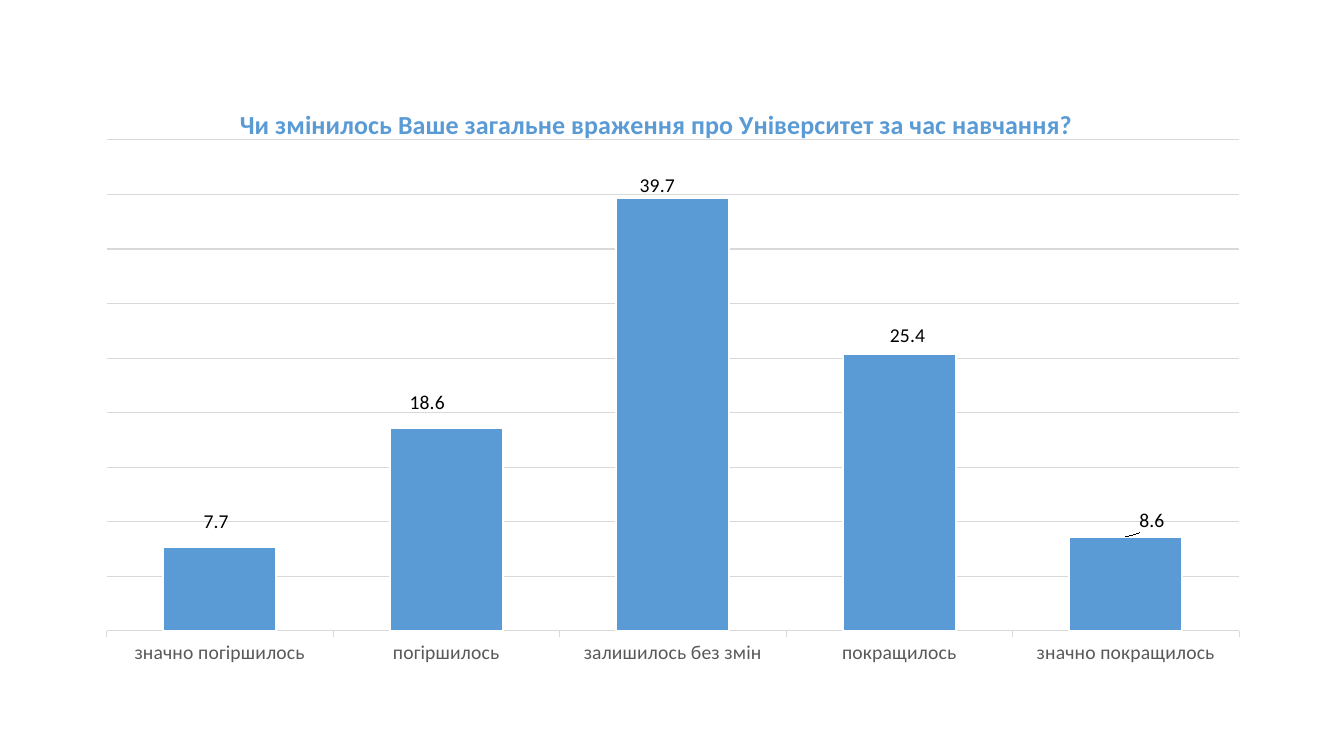
from pptx import Presentation
from pptx.chart.data import CategoryChartData
from pptx.dml.color import RGBColor
from pptx.enum.chart import XL_CHART_TYPE, XL_LABEL_POSITION, XL_TICK_MARK
from pptx.oxml import parse_xml
from pptx.oxml.ns import nsdecls
from pptx.util import Inches, Pt

COLUMNS = XL_CHART_TYPE.COLUMN_CLUSTERED
OUTSIDE_END = XL_LABEL_POSITION.OUTSIDE_END
TICK_OUT, TICK_NONE = XL_TICK_MARK.OUTSIDE, XL_TICK_MARK.NONE

FONT = "Calibri"
COLORS = {"bar": "5B9BD5", "edge": "FFFFFF", "grid": "D9D9D9",
          "axis": "595959", "label": "000000"}
TITLE = "Чи змінилось Ваше загальне враження про Університет за час навчання?"

# Answer, share in percent, label shift as shares of the chart's size
ANSWERS = [
    ("значно погіршилось", 7.7, (-0.003, -0.015)),
    ("погіршилось", 18.6, (-0.016, -0.015)),
    ("залишилось без змін", 39.7, (-0.013, 0.007)),
    ("покращилось", 25.4, (0.007, -0.003)),
    ("значно покращилось", 8.6, (0.022, 0)),
]


def style_font(font, size, color, bold=False):
    font.name, font.size, font.bold = FONT, Pt(size), bold
    font.color.rgb = RGBColor.from_string(COLORS[color])


def style_line(line, color, width):
    line.color.rgb = RGBColor.from_string(COLORS[color])
    line.width = Pt(width)


def set_layout(parent, index, settings):
    """Give a chart part a manual layout, as its child number index."""
    for layout in parent.xpath("c:layout"):
        parent.remove(layout)
    items = "".join(f'<c:{tag} val="{value}"/>' for tag, value in settings.items())
    parent.insert(index, parse_xml(
        f'<c:layout {nsdecls("c")}><c:manualLayout>{items}</c:manualLayout></c:layout>'))


def add_answer_chart(presentation, slide):
    data = CategoryChartData()
    data.categories = [answer for answer, _, _ in ANSWERS]
    data.add_series("Series 1", [share for _, share, _ in ANSWERS])
    frame = slide.shapes.add_chart(
        COLUMNS, Inches(0.62), Inches(0.79), Inches(11.8), Inches(5.93), data)
    chart = frame.chart
    chart.has_legend = False
    style_font(chart.font, 10, "label")
    set_layout(chart.element.xpath(".//c:plotArea")[0], 0, {
        "layoutTarget": "inner", "xMode": "edge", "yMode": "edge",
        "x": 0.037, "y": 0.101, "w": 0.952, "h": 0.821})
    return chart


def style_title(chart):
    chart.has_title = True
    run = chart.chart_title.text_frame.paragraphs[0].add_run()
    run.text = TITLE
    style_font(run.font, 18.6, "bar", bold=True)
    chart.chart_title.include_in_layout = False
    set_layout(chart.element.xpath("c:chart/c:title")[0], 1, {
        "xMode": "edge", "yMode": "edge", "x": 0.145, "y": 0.036})


def style_axes(chart):
    categories, values = chart.category_axis, chart.value_axis
    categories.major_tick_mark = TICK_OUT
    categories.minor_tick_mark = TICK_NONE
    style_font(categories.tick_labels.font, 14, "axis")
    style_line(categories.format.line, "grid", 0.75)
    values.visible = False
    values.minimum_scale, values.maximum_scale, values.major_unit = 0, 45, 5
    values.has_major_gridlines = True
    style_line(values.major_gridlines.format.line, "grid", 0.75)


def style_bars(chart):
    plot = chart.plots[0]
    plot.gap_width = 100
    plot.vary_by_categories = False
    bars = plot.series[0]
    bars.format.fill.solid()
    bars.format.fill.fore_color.rgb = RGBColor.from_string(COLORS["bar"])
    style_line(bars.format.line, "edge", 1.5)

    # Value labels, each with its own shift
    bars.data_labels.show_value = True
    bars.data_labels.position = OUTSIDE_END
    style_font(bars.data_labels.font, 14, "label")
    for index in range(len(ANSWERS)):
        label = bars.points[index].data_label
        label.position = OUTSIDE_END
        style_font(label.font, 14, "label")
    for element, (_, _, (x, y)) in zip(chart.element.xpath(".//c:dLbl"), ANSWERS):
        set_layout(element, 1, {"x": x, "y": y})


def main():
    presentation = Presentation()
    presentation.slide_width, presentation.slide_height = Inches(13.33), Inches(7.5)
    slide = presentation.slides.add_slide(presentation.slide_layouts[6])
    chart = add_answer_chart(presentation, slide)
    style_title(chart)
    style_axes(chart)
    style_bars(chart)
    presentation.save("out.pptx")


if __name__ == "__main__":
    main()
